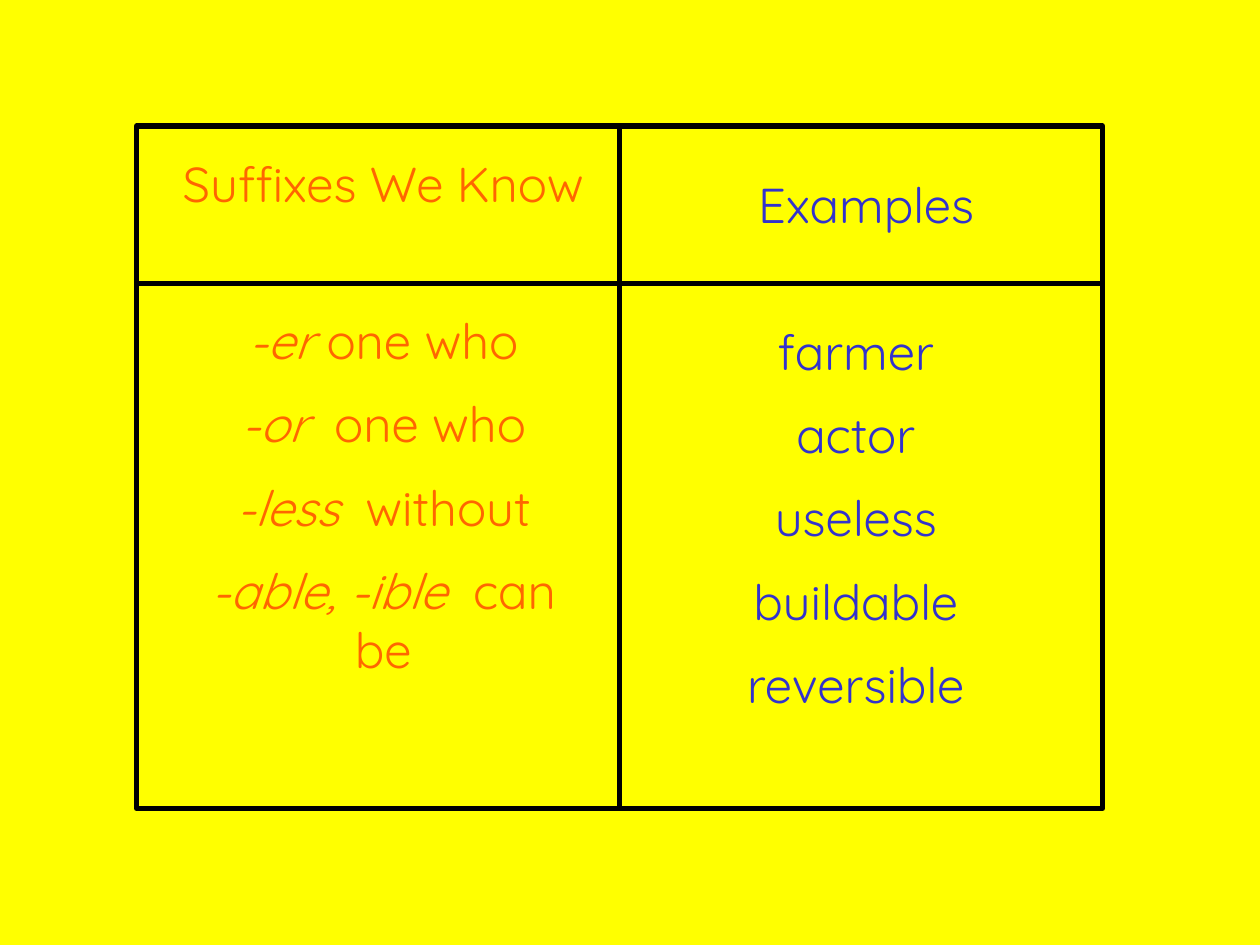
"""Build a slide with a two-column chart of suffixes and example words."""
from dataclasses import dataclass
from itertools import product

from pptx import Presentation
from pptx.dml.color import RGBColor as Color
from pptx.enum.shapes import MSO_SHAPE as Shape
from pptx.enum.text import MSO_AUTO_SIZE as AutoSize, PP_ALIGN as Align
from pptx.util import Emu, Pt

PX = 9525


@dataclass(frozen=True)
class Theme:
    background: Color = Color.from_string("FFFF00")
    border: Color = Color.from_string("000000")
    suffix: Color = Color.from_string("FF6600")
    example: Color = Color.from_string("3333CC")
    font: str = "Quicksand"
    size: Pt = Pt(28)
    gap: Pt = Pt(14)
    border_width: Pt = Pt(3)


THEME = Theme()
TEXT_WIDTH = 328
COLUMNS = [(104, 368), (472, 368)]
ROWS = [(96, 120), (216, 400)]

SUFFIXES = [
    ("-er", " one who"),
    ("-or", "  one who"),
    ("-less", "  without"),
    ("-able, -ible  ", "can be"),
]
EXAMPLES = ["farmer", "actor", "useless", "buildable", "reversible"]

TEXTS = [
    (128, 112, 99, THEME.suffix, [("", "Suffixes We Know")]),
    (496, 128, 55, THEME.example, [("", "Examples")]),
    (128, 232, 436, THEME.suffix, SUFFIXES),
    (488, 240, 324, THEME.example, [("", word) for word in EXAMPLES]),
]


def px(*lengths):
    return [Emu(length * PX) for length in lengths]


def add_cell(page, column, row):
    (left, width), (top, height) = column, row
    cell = page.shapes.add_shape(Shape.RECTANGLE, *px(left, top, width, height))
    cell.shadow.inherit = False
    cell.fill.background()
    cell.line.color.rgb = THEME.border
    cell.line.width = THEME.border_width


def add_text(page, left, top, height, color, lines):
    box = page.shapes.add_textbox(*px(left, top, TEXT_WIDTH, height))
    frame = box.text_frame
    frame.word_wrap = True
    frame.auto_size = AutoSize.SHAPE_TO_FIT_TEXT
    for index, (suffix, words) in enumerate(lines):
        para = frame.add_paragraph() if index else frame.paragraphs[0]
        para.alignment = Align.CENTER
        para.space_before = THEME.gap
        para.font.name = THEME.font
        para.font.size = THEME.size
        para.font.color.rgb = color
        if suffix:
            span = para.add_run()
            span.text = suffix
            span.font.italic = True
        para.add_run().text = words


def main():
    deck = Presentation()
    deck.slide_width, deck.slide_height = px(960, 720)
    page = deck.slides.add_slide(deck.slide_layouts[6])
    page.background.fill.solid()
    page.background.fill.fore_color.rgb = THEME.background
    for row, column in product(ROWS, COLUMNS):
        add_cell(page, column, row)
    for text in TEXTS:
        add_text(page, *text)
    deck.save("out.pptx")


if __name__ == "__main__":
    main()
